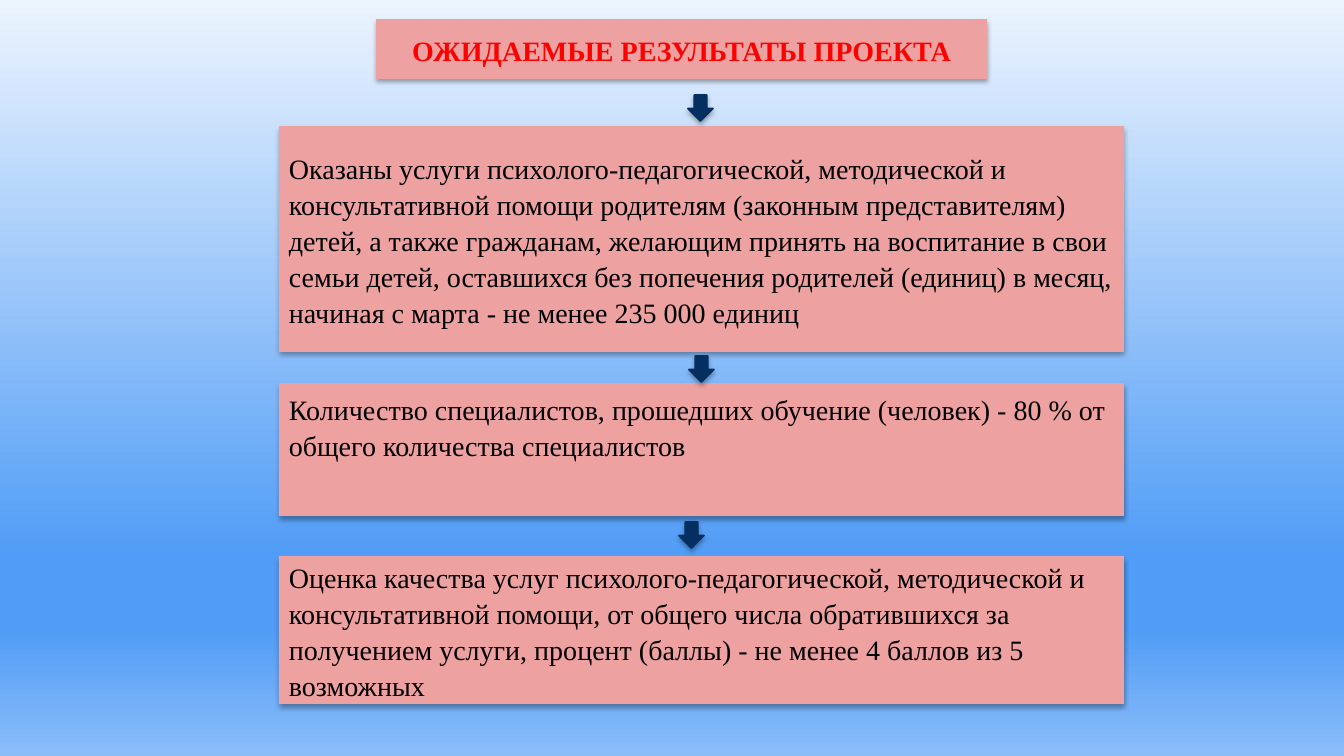
from lxml.etree import SubElement
from pptx import Presentation
from pptx.dml.color import RGBColor
from pptx.enum.shapes import MSO_SHAPE
from pptx.enum.text import MSO_ANCHOR, MSO_AUTO_SIZE, PP_ALIGN
from pptx.oxml.ns import qn
from pptx.util import Emu, Pt

EMU_PER_PX = 914400 / 100.8
PINK, RED, BLACK, NAVY = "EEA1A1", "FF0000", "000000", "052F61"
BACKGROUND_STOPS = [(0, "ECF4FE"), (74, "509CF6"), (83, "509CF6"), (100, "8BBDF9")]
BOX_LEFT, BOX_WIDTH = 279, 845
ARROW_WIDTH, ARROW_HEIGHT = 25, 26
TITLE = "ОЖИДАЕМЫЕ РЕЗУЛЬТАТЫ ПРОЕКТА"
RESULTS = [
    (126, 226, MSO_ANCHOR.MIDDLE,
     "Оказаны услуги психолого-педагогической, методической и консультативной помощи "
     "родителям (законным представителям) детей, а также гражданам, желающим принять "
     "на воспитание в свои семьи детей, оставшихся без попечения родителей (единиц) "
     "в месяц, начиная с марта - не менее 235 000 единиц"),
    (383, 133, MSO_ANCHOR.TOP,
     "Количество специалистов, прошедших обучение (человек) - 80 % от общего "
     "количества специалистов"),
    (556, 148, MSO_ANCHOR.MIDDLE,
     "Оценка качества услуг психолого-педагогической, методической и консультативной "
     "помощи, от общего числа обратившихся за получением услуги, процент (баллы) - "
     "не менее 4 баллов из 5 возможных"),
]
ARROWS = [(688, 95), (689, 356), (679, 522)]


def px(length):
    """Convert pixels to EMU."""
    return Emu(round(length * EMU_PER_PX))


def color(hex_string):
    """Turn a hex string into a colour."""
    return RGBColor.from_string(hex_string)


def paint_background(slide):
    """Fill the slide with a vertical gradient."""
    fill = slide.background.fill
    fill.gradient()
    fill.gradient_angle = 270
    stop_list = slide.element.find(".//" + qn("a:gsLst"))
    for stop in list(stop_list):
        stop_list.remove(stop)
    for position, hex_string in BACKGROUND_STOPS:
        stop = SubElement(stop_list, qn("a:gs"), pos=str(position * 1000))
        SubElement(stop, qn("a:srgbClr"), val=hex_string)


def add_shadow(shape):
    """Give a shape a soft shadow below it."""
    shape.shadow.inherit = False
    effects = shape.element.spPr.find(qn("a:effectLst"))
    shadow = SubElement(effects, qn("a:outerShdw"), blurRad=str(Pt(3.5)),
                        dist=str(Pt(2.2)), dir="5400000", rotWithShape="0")
    shadow_color = SubElement(shadow, qn("a:srgbClr"), val=BLACK)
    SubElement(shadow_color, qn("a:alpha"), val="32000")


def style_shape(shape, fill, line=None):
    """Set the fill, outline and shadow of a shape."""
    shape.fill.solid()
    shape.fill.fore_color.rgb = color(fill)
    if line:
        shape.line.color.rgb = color(line)
        shape.line.width = Pt(1.25)
    else:
        shape.line.fill.background()
    add_shadow(shape)


def write_text(shape, text, *, font_color=BLACK, bold=False,
               align=PP_ALIGN.LEFT, anchor=MSO_ANCHOR.MIDDLE):
    """Write one formatted paragraph into a shape."""
    frame = shape.text_frame
    frame.word_wrap = True
    frame.auto_size = MSO_AUTO_SIZE.NONE
    frame.vertical_anchor = anchor
    if anchor == MSO_ANCHOR.TOP:
        frame.margin_top = px(7)
    paragraph = frame.paragraphs[0]
    paragraph.alignment = align
    paragraph.line_spacing = 1.07
    paragraph.space_after = Pt(8)
    run = paragraph.add_run()
    run.text = text
    run.font.name = "Times New Roman"
    run.font.size = Pt(20)
    run.font.bold = bold
    run.font.color.rgb = color(font_color)


def add_title(slide):
    """Place the heading in the title placeholder."""
    title = slide.shapes.title
    title.left, title.top, title.width, title.height = map(px, (376, 19, 611, 60))
    style_shape(title, PINK)
    write_text(title, TITLE, font_color=RED, bold=True, align=PP_ALIGN.CENTER)


def add_result(slide, top, height, anchor, text):
    """Add a box with one expected result."""
    box = slide.shapes.add_shape(MSO_SHAPE.RECTANGLE, px(BOX_LEFT), px(top),
                                 px(BOX_WIDTH), px(height))
    style_shape(box, PINK)
    write_text(box, text, anchor=anchor)


def add_arrow(slide, left, top):
    """Add a down arrow between two boxes."""
    arrow = slide.shapes.add_shape(MSO_SHAPE.DOWN_ARROW, px(left), px(top),
                                   px(ARROW_WIDTH), px(ARROW_HEIGHT))
    style_shape(arrow, NAVY, line=NAVY)


def main():
    """Build and save the slide."""
    presentation = Presentation()
    presentation.slide_width, presentation.slide_height = px(1344), px(756)
    slide = presentation.slides.add_slide(presentation.slide_layouts[5])
    paint_background(slide)
    add_title(slide)
    for result in RESULTS:
        add_result(slide, *result)
    for left, top in ARROWS:
        add_arrow(slide, left, top)
    presentation.save("out.pptx")


if __name__ == "__main__":
    main()
